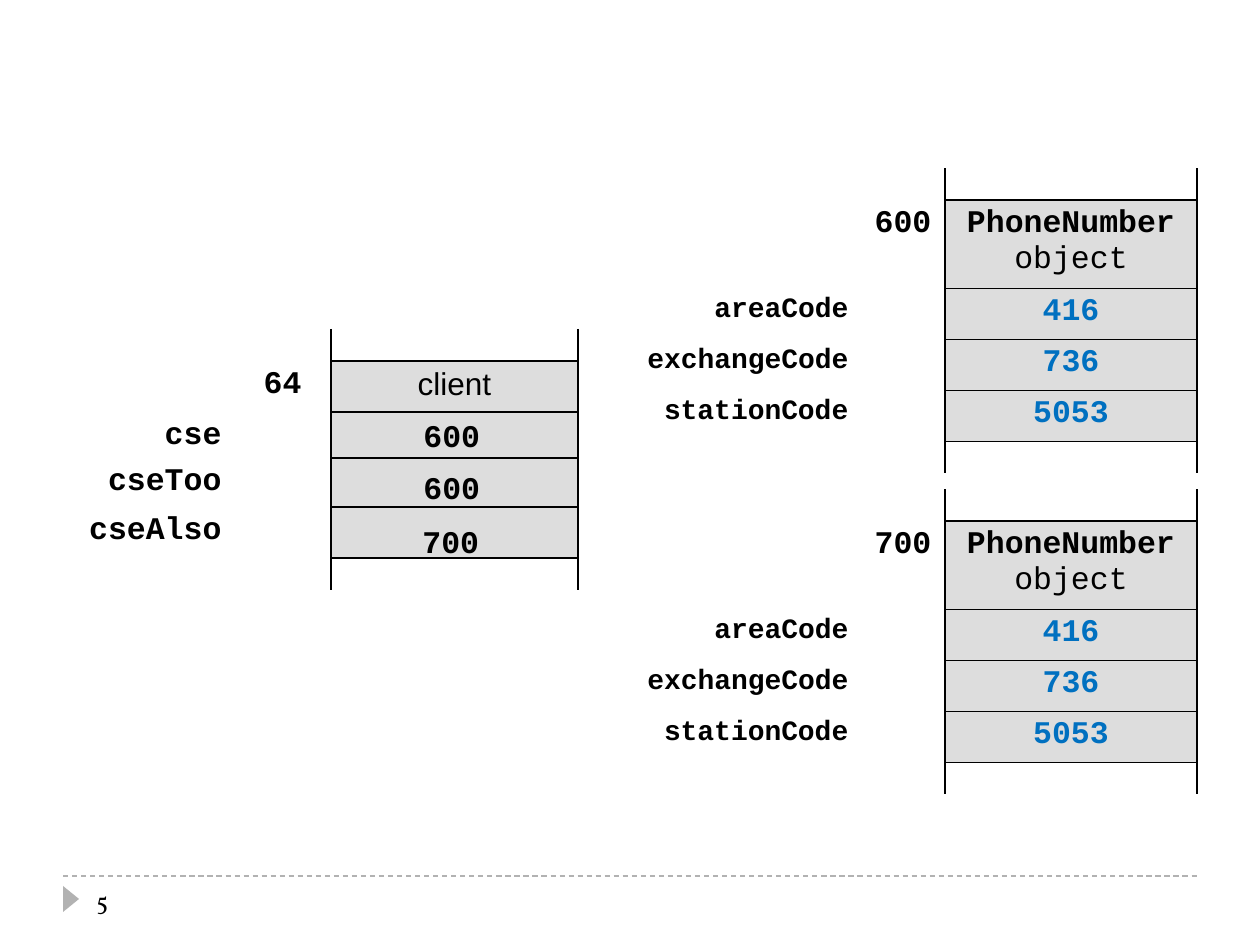
from lxml.etree import SubElement
from pptx import Presentation
from pptx.dml.color import RGBColor
from pptx.enum.dml import MSO_LINE
from pptx.enum.shapes import MSO_CONNECTOR, MSO_SHAPE
from pptx.enum.text import MSO_ANCHOR, MSO_AUTO_SIZE, PP_ALIGN
from pptx.oxml.ns import qn
from pptx.util import Pt

SCALE = 914400 / 126
MONO = "Courier New"
BLACK, BLUE, GREY, PALE = "000000", "0070C0", "B2B2B2", "DDDDDD"
PLAIN = "{2D5ABB26-0587-4C30-8999-92F81FD0307C}"
LEFT, MID, RIGHT = PP_ALIGN.LEFT, PP_ALIGN.CENTER, PP_ALIGN.RIGHT
EDGE, ROW, HEAD = 32, 51, 84


def px(*vals):
    """Turn pixel lengths into EMU."""
    return [round(val * SCALE) for val in vals]


def rgb(code):
    """Turn a hex string into a colour."""
    return RGBColor.from_string(code)


def write(frame, text, size=18, color=BLACK, font=MONO, bold=True, align=LEFT):
    """Fill a text frame in one style."""
    frame.text = text
    for para in frame.paragraphs:
        para.alignment = align
        for run in para.runs:
            run.font.size = Pt(size)
            run.font.name = font
            run.font.bold = bold
            run.font.color.rgb = rgb(color)


def border(cell, sides):
    """Draw black lines on the named sides of a cell."""
    props = cell._tc.get_or_add_tcPr()
    for side in sides:
        line = SubElement(props, qn(f"a:ln{side}"), w="12700")
        fill = SubElement(line, qn("a:solidFill"))
        SubElement(fill, qn("a:srgbClr"), val=BLACK)


def shrink(cell):
    """Keep an empty cell from stretching its row."""
    mark = cell.text_frame.paragraphs[0]._p.get_or_add_endParaRPr()
    mark.set("sz", "800")


def add_grid(slide, left, top, cols, rows, capped=True):
    """Add a memory table from (height, label, address, value) rows."""
    rows = [(EDGE, "", "", "")] * capped + rows + [(EDGE, "", "", "")]
    high = sum(row[0] for row in rows)
    box = px(left, top, sum(cols), high)
    table = slide.shapes.add_table(len(rows), 3, *box).table
    table.first_row = table.horz_banding = False
    table._tbl.tblPr.find(qn("a:tableStyleId")).text = PLAIN
    for col, wide in zip(table.columns, px(*cols)):
        col.width = wide
    size = 16 if len(rows) > 4 else 18
    last = len(rows) - 1
    for num, (high, label, spot, value) in enumerate(rows):
        table.rows[num].height = px(high)[0]
        used = num < last and (num > 0 or not capped)
        tag, mid, slot = table.rows[num].cells
        border(mid, "R")
        border(slot, "LRTB" if used else "LRT" if num == last else "LRB")
        for cell in (tag, mid, slot):
            cell.fill.background()
            shrink(cell)
        if used:
            slot.fill.solid()
            slot.fill.fore_color.rgb = rgb(PALE)
        if label:
            write(tag.text_frame, label, size, align=RIGHT)
        if spot:
            write(mid.text_frame, spot, align=MID)
        if value:
            color = BLUE if value.isdigit() else BLACK
            write(slot.text_frame, value, color=color, align=MID)
    return table


def add_client(slide):
    """Add the client block and its references."""
    cols = (161, 97, 247)
    rows = [(ROW, "", "64", "client"), (ROW, "cse", "", "")]
    table = add_grid(slide, 73, 329, cols, rows)
    write(table.cell(1, 2).text_frame, "client", font="Arial", bold=False, align=MID)
    for top, name in ((458, "cseToo"), (507, "cseAlso")):
        add_grid(slide, 73, top, cols, [(ROW, name, "", "")], capped=False)


def add_phone(slide, top, spot):
    """Add one PhoneNumber object block."""
    rows = [(HEAD, "", spot, "PhoneNumber\nobject"), (ROW, "areaCode", "", "416"),
            (ROW, "exchangeCode", "", "736"), (ROW, "stationCode", "", "5053")]
    table = add_grid(slide, 630, top, (231, 84, 252), rows)
    table.cell(1, 2).text_frame.paragraphs[1].runs[0].font.bold = False


def add_value(slide, left, top, text):
    """Add a reference value over a client slot."""
    frame = slide.shapes.add_textbox(*px(left, top, 82, 50)).text_frame
    frame.word_wrap = False
    frame.auto_size = MSO_AUTO_SIZE.SHAPE_TO_FIT_TEXT
    write(frame, text)


def add_footer(slide):
    """Add the dashed rule, the marker and the page number."""
    rule = slide.shapes.add_connector(MSO_CONNECTOR.STRAIGHT, *px(63, 876, 1197, 876))
    rule.line.color.rgb = rgb(GREY)
    rule.line.width = Pt(0.75)
    rule.line.dash_style = MSO_LINE.DASH
    SubElement(rule._element.spPr, qn("a:effectLst"))
    mark = slide.shapes.add_shape(MSO_SHAPE.ISOSCELES_TRIANGLE, *px(58, 891, 26, 16))
    mark.rotation = 90
    mark.shadow.inherit = False
    mark.fill.solid()
    mark.fill.fore_color.rgb = rgb(GREY)
    mark.line.fill.background()
    frame = slide.shapes.add_textbox(*px(84, 876, 273, 50)).text_frame
    frame.word_wrap = True
    frame.vertical_anchor = MSO_ANCHOR.MIDDLE
    write(frame, "5", 14, font="Vollkorn", bold=False)


def main():
    """Build the memory diagram slide."""
    deck = Presentation()
    deck.slide_width, deck.slide_height = px(1260, 945)
    slide = deck.slides.add_slide(deck.slide_layouts[6])
    add_footer(slide)
    add_client(slide)
    add_phone(slide, 168, "600")
    add_phone(slide, 489, "700")
    for left, top, text in ((411, 410, "600"), (411, 462, "600"), (410, 516, "700")):
        add_value(slide, left, top, text)
    deck.save("out.pptx")


if __name__ == "__main__":
    main()
